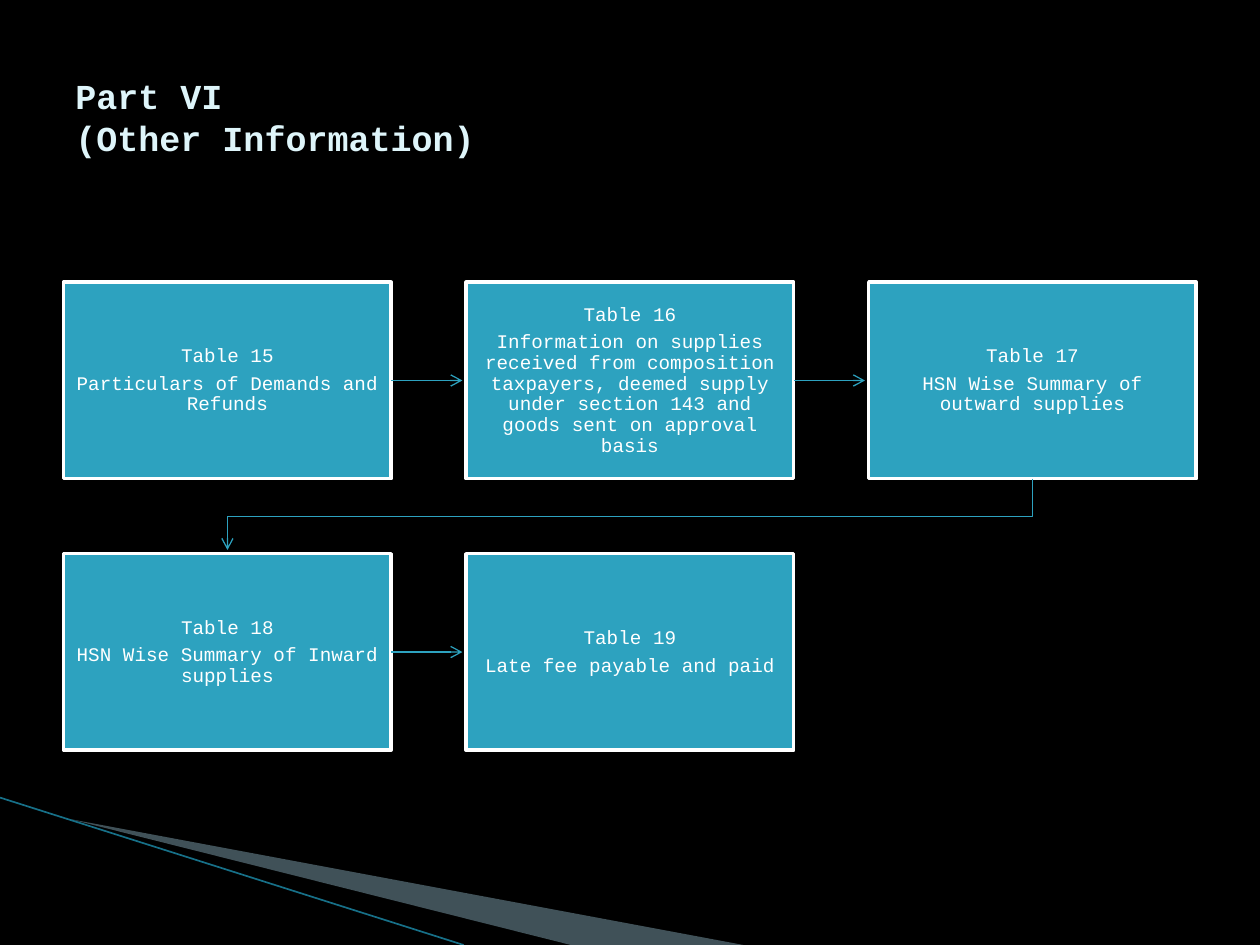
from lxml import etree
from pptx import Presentation
from pptx.dml.color import RGBColor as RGB
from pptx.enum.shapes import MSO_CONNECTOR as Connector, MSO_SHAPE as Shape
from pptx.enum.text import MSO_ANCHOR as Anchor, PP_ALIGN as Align
from pptx.oxml.ns import qn
from pptx.util import Inches, Pt

# Content
TITLE = "Part VI\v(Other Information)"
TABLES = [
    ("Table 15", "Particulars of Demands and Refunds"),
    ("Table 16", "Information on supplies received from composition taxpayers, "
                 "deemed supply under section 143 and goods sent on approval basis"),
    ("Table 17", "HSN Wise Summary of outward supplies"),
    ("Table 18", "HSN Wise Summary of Inward supplies"),
    ("Table 19", "Late fee payable and paid"),
]

THEME = {
    "font": "Courier New", "title_size": Pt(20), "box_size": Pt(11),
    "background": RGB(0, 0, 0), "title": RGB(0xDE, 0xF5, 0xFA),
    "accent": RGB(0x2D, 0xA2, 0xBF), "white": RGB(255, 255, 255),
    "wedge": RGB(0xA0, 0xCB, 0xDC), "stripe": RGB(0x17, 0x70, 0x88),
}

# Grid in inches
WIDTH, HEIGHT = 10, 7.5
COLUMNS = 3
LEFT, TOP = 0.505, 2.24
BOX_W, BOX_H = 2.6, 1.56
STEP_X, STEP_Y = 3.195, 2.155
ARROW_GAP = 0.03

deck = Presentation()
deck.slide_width, deck.slide_height = Inches(WIDTH), Inches(HEIGHT)
page = deck.slides.add_slide(deck.slide_layouts[6])
page.background.fill.solid()
page.background.fill.fore_color.rgb = THEME["background"]


def style_line(shape, color, width, arrow=False):
    shape.line.color.rgb = color
    shape.line.width = Pt(width)
    if arrow:
        etree.SubElement(shape.line._get_or_add_ln(), qn("a:tailEnd"), type="arrow")


def add_line(start, end, color, width, arrow=False):
    points = [Inches(value) for value in (*start, *end)]
    line = page.shapes.add_connector(Connector.STRAIGHT, *points)
    style_line(line, color, width, arrow)
    etree.SubElement(line._element.spPr, qn("a:effectLst"))
    return line


def add_outline(points, close):
    corners = [(Inches(x), Inches(y)) for x, y in points]
    builder = page.shapes.build_freeform(*corners[0])
    builder.add_line_segments(corners[1:], close=close)
    shape = builder.convert_to_shape()
    shape.shadow.inherit = False
    return shape


def set_font(para, size, color, bold=False):
    para.font.name, para.font.size = THEME["font"], size
    para.font.color.rgb, para.font.bold = color, bold


def add_box(left, top, texts):
    box = page.shapes.add_shape(
        Shape.RECTANGLE, *map(Inches, (left, top, BOX_W, BOX_H)))
    box.shadow.inherit = False
    box.fill.solid()
    box.fill.fore_color.rgb = THEME["accent"]
    style_line(box, THEME["white"], 2)
    frame = box.text_frame
    frame.word_wrap, frame.vertical_anchor = True, Anchor.MIDDLE
    frame.margin_left = frame.margin_right = Inches(0.09)
    frame.margin_top = frame.margin_bottom = Inches(0.09)
    frame.text = "\n".join(texts)
    for para in frame.paragraphs:
        para.alignment, para.line_spacing = Align.CENTER, 0.9
        set_font(para, THEME["box_size"], THEME["white"])
    frame.paragraphs[0].space_after = Pt(3.85)
    return box


# Corner decoration
wedge = add_outline([(0.55, 6.5), (5.9, HEIGHT), (4.53, HEIGHT)], close=True)
wedge.fill.solid()
wedge.fill.fore_color.rgb = THEME["wedge"]
wedge.line.fill.background()
wedge_color = wedge._element.spPr.find(qn("a:solidFill"))[0]
etree.SubElement(wedge_color, qn("a:alpha"), val="40000")
add_line((0, 6.33), (3.68, HEIGHT), THEME["stripe"], 0.95)

# Title
title = page.shapes.add_textbox(*map(Inches, (0.5, 0.3, 9, 1.25))).text_frame
title.word_wrap, title.vertical_anchor = True, Anchor.MIDDLE
title.text = TITLE
set_font(title.paragraphs[0], THEME["title_size"], THEME["title"], bold=True)

# Boxes in reading order
places = [(LEFT + STEP_X * (i % COLUMNS), TOP + STEP_Y * (i // COLUMNS))
          for i in range(len(TABLES))]
boxes = [add_box(*place, texts) for place, texts in zip(places, TABLES)]

# Arrows: straight along a row, stepped down to the next row
for box, (left, top), (next_left, next_top) in zip(boxes, places, places[1:]):
    if top == next_top:
        middle = top + BOX_H / 2
        arrow = add_line((left + BOX_W, middle), (next_left - ARROW_GAP, middle),
                         THEME["accent"], 0.75, arrow=True)
        arrow.begin_connect(box, 3)
    else:
        start_x, end_x = left + BOX_W / 2, next_left + BOX_W / 2
        bottom = top + BOX_H
        turn = (bottom + next_top) / 2
        step = add_outline([(start_x, bottom), (start_x, turn), (end_x, turn),
                            (end_x, next_top - ARROW_GAP)], close=False)
        step.fill.background()
        style_line(step, THEME["accent"], 0.75, arrow=True)

deck.save("out.pptx")
